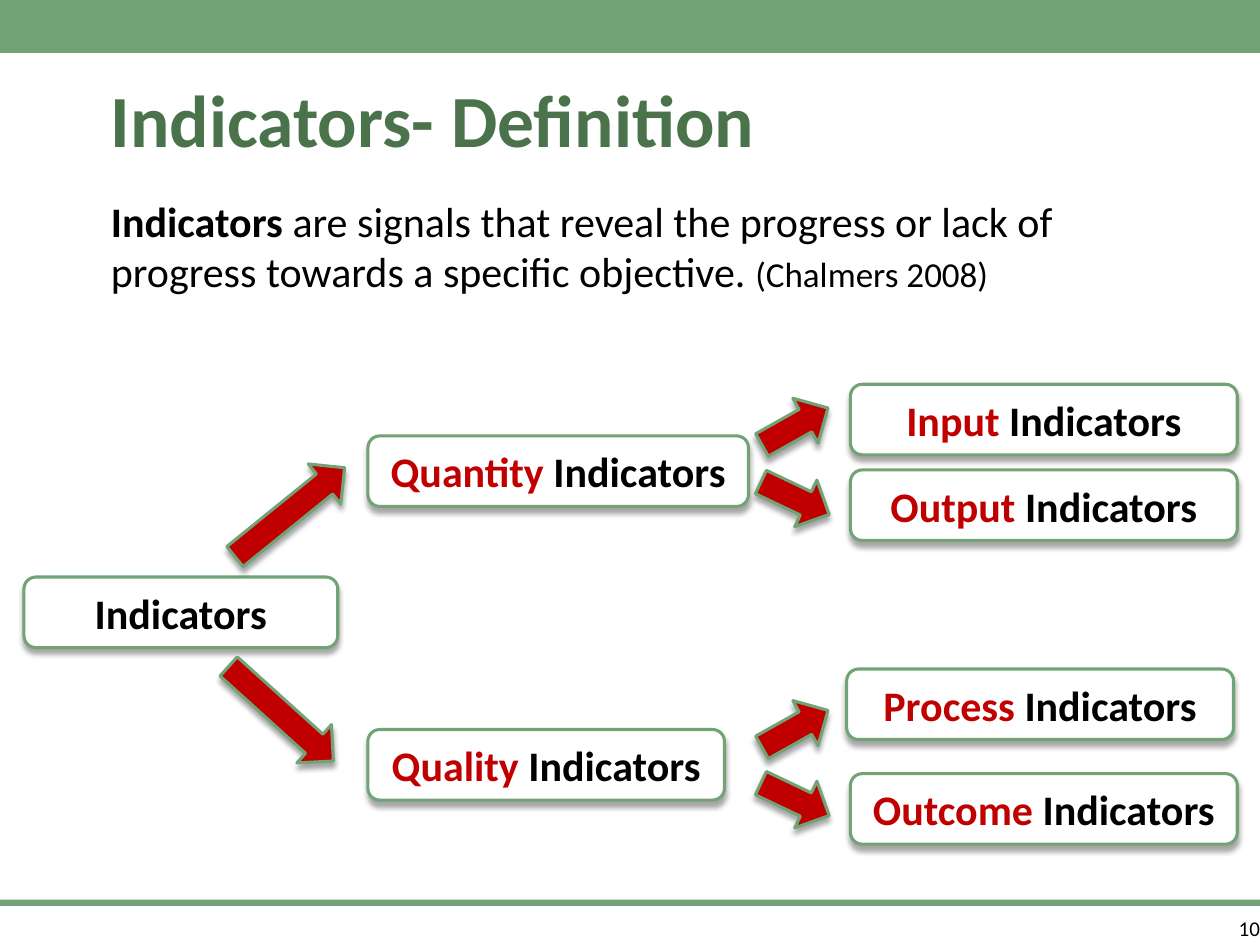
from lxml import etree
from pptx import Presentation, util as u
from pptx.dml.color import RGBColor
from pptx.enum import shapes, text
from pptx.oxml.ns import qn

GREEN = RGBColor(0x72, 0xA3, 0x76)
DARK = RGBColor(0x4B, 0x73, 0x4B)
RED = RGBColor(0xC0, 0x00, 0x00)
BLACK = RGBColor(0x00, 0x00, 0x00)
WHITE = RGBColor(0xFF, 0xFF, 0xFF)

WIDTH, HEIGHT = u.Inches(10), u.Inches(7.5)
COLS, ROWS = 100, 75  # grid over the whole slide
BOX_H, ARROW_H = 5.6, 4.1

# Left column, top row, width in columns, coloured word, plain word
BOXES = [
    (1.9, 45.8, 24.9, "", "Indicators"),
    (29.2, 57.9, 28.3, "Quality", " Indicators"),
    (29.2, 34.6, 30.2, "Quantity ", "Indicators"),
    (67.5, 30.5, 30.7, "Input ", "Indicators"),
    (67.5, 37.3, 30.7, "Output ", "Indicators"),
    (67.5, 61.4, 30.7, "Outcome ", "Indicators"),
    (67.2, 53.1, 30.7, "Process ", "Indicators"),
]
# Left column, top row, length, turn in degrees
ARROWS = [(17.4, 38.6, 11.2, 321), (16.7, 54.6, 11.2, 42.1)]
ARROWS += [(60.1, top, 6, turn) for top, turn in
           [(31.8, 330.7), (37.5, 25.4), (55.8, 330.7), (61.4, 25.4)]]


def grid(left, top, wide, high):
    """Turn columns and rows into slide lengths."""
    return (int(WIDTH * left / COLS), int(HEIGHT * top / ROWS),
            int(WIDTH * wide / COLS), int(HEIGHT * high / ROWS))


def place(item, *cells):
    item.left, item.top, item.width, item.height = grid(*cells)


def write(item, runs, size=24, align=text.PP_ALIGN.LEFT,
          anchor=text.MSO_ANCHOR.TOP, inset=0.05):
    """Fill an item with one paragraph; a run is (words, colour, bold[, size])."""
    frame = item.text_frame
    frame.word_wrap = True
    frame.auto_size = text.MSO_AUTO_SIZE.NONE
    frame.vertical_anchor = anchor
    frame.margin_left = frame.margin_right = u.Inches(inset)
    frame.margin_top = frame.margin_bottom = u.Inches(inset)
    para = frame.paragraphs[0]
    para.alignment = align
    para.space_before = u.Pt(0)
    for words, colour, bold, *own in runs:
        run = para.add_run()
        run.text = words
        font = run.font
        font.name, font.size, font.bold = "Calibri", u.Pt(own[0] if own else size), bold
        font.color.rgb = colour
    return para


def plain(para):
    """Drop the bullet and its hanging indent."""
    props = para._p.get_or_add_pPr()
    props.set("marL", "0")
    props.set("indent", "0")
    etree.SubElement(props, qn("a:buNone"))


def shade(item):
    """Soft shadow that falls straight down."""
    props = item._element.spPr
    effect = etree.SubElement(props, qn("a:effectLst"))
    outer = etree.SubElement(effect, qn("a:outerShdw"), blurRad=str(u.Pt(3)),
                             dist=str(u.Pt(3)), dir="5400000", rotWithShape="0")
    tint = etree.SubElement(outer, qn("a:srgbClr"), val="000000")
    etree.SubElement(tint, qn("a:alpha"), val="35000")


def shape(slide, kind, cells, fill, edge=None):
    item = slide.shapes.add_shape(kind, *grid(*cells))
    item.fill.solid()
    item.fill.fore_color.rgb = fill
    if edge is None:
        item.shadow.inherit = False
        item.line.fill.background()
    else:
        item.line.color.rgb = edge
        item.line.width = u.Pt(1.75)
        shade(item)
    return item


def box(slide, left, top, wide, key, rest):
    item = shape(slide, shapes.MSO_SHAPE.FLOWCHART_ALTERNATE_PROCESS,
                 (left, top, wide, BOX_H), WHITE, GREEN)
    runs = [(key, RED, True)] if key else []
    write(item, runs + [(rest, BLACK, True)], align=text.PP_ALIGN.CENTER,
          anchor=text.MSO_ANCHOR.MIDDLE)


def arrow(slide, left, top, wide, turn):
    item = shape(slide, shapes.MSO_SHAPE.RIGHT_ARROW,
                 (left, top, wide, ARROW_H), RED, GREEN)
    item.rotation = turn


def main():
    deck = Presentation()
    deck.slide_width, deck.slide_height = WIDTH, HEIGHT
    slide = deck.slides.add_slide(deck.slide_layouts[1])

    # Top band and footer rule
    for top, high in [(0, 4.2), (71.4, 0.5)]:
        shape(slide, shapes.MSO_SHAPE.RECTANGLE, (0, top, COLS, high), GREEN)

    # Title and definition
    title, body = slide.shapes.title, slide.placeholders[1]
    place(title, 8.3, 4.2, 74.2, 9.2)
    write(title, [("Indicators- Definition", DARK, True)], size=42,
          anchor=text.MSO_ANCHOR.BOTTOM)
    place(body, 8.3, 15, 82.5, 50)
    plain(write(body, [
        ("Indicators", BLACK, True),
        (" are signals that reveal the progress or lack of progress "
         "towards a specific objective. ", BLACK, False),
        ("(Chalmers 2008)", BLACK, False, 20)]))

    # Page number
    page = slide.shapes.add_textbox(*grid(91.7, 72.7, 8.3, 4))
    write(page, [("10", BLACK, False)], size=12, align=text.PP_ALIGN.RIGHT, inset=0)

    # Indicator tree
    for row in BOXES:
        box(slide, *row)
    for row in ARROWS:
        arrow(slide, *row)

    deck.save("out.pptx")


if __name__ == "__main__":
    main()
